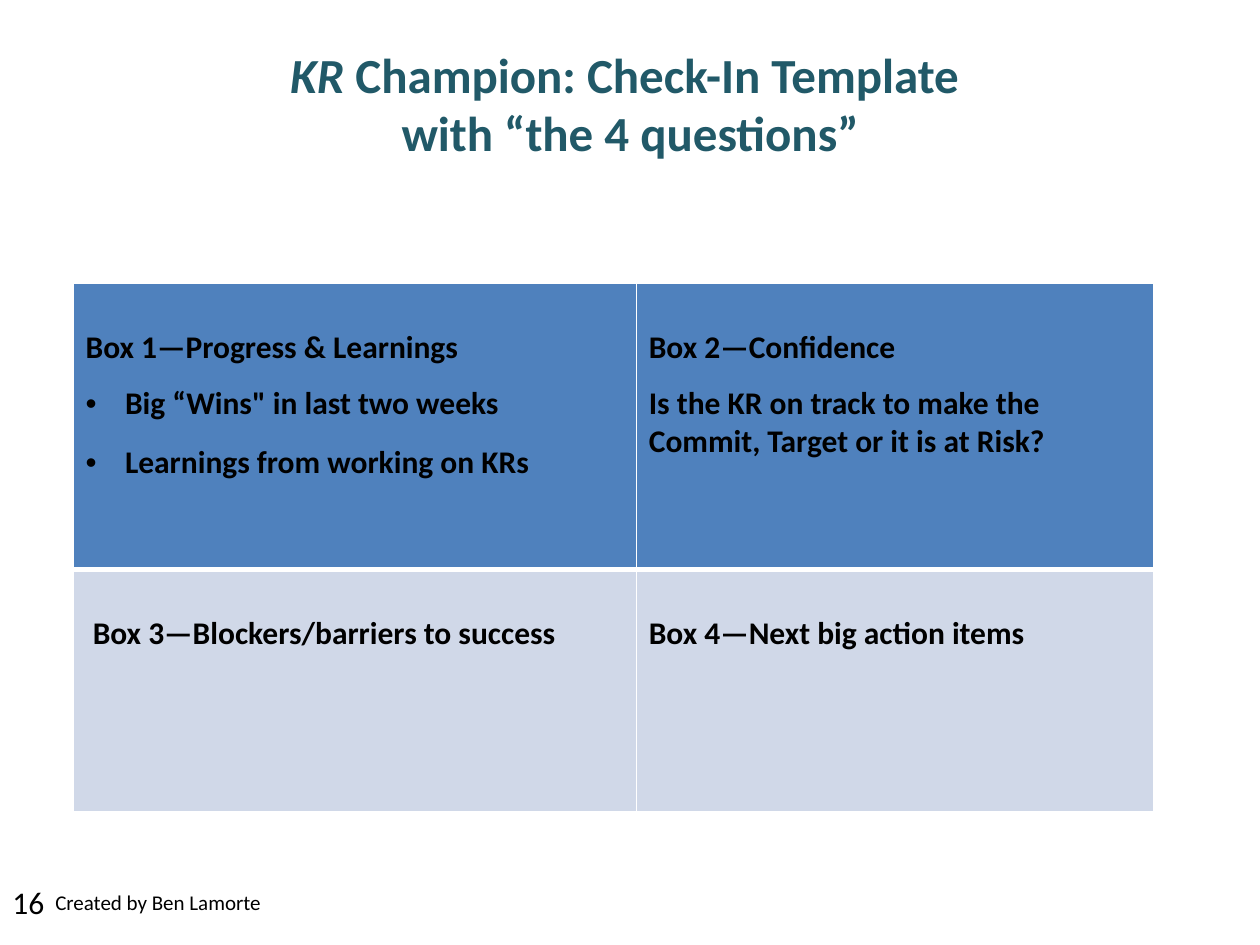
from dataclasses import dataclass
from typing import NamedTuple

from lxml.etree import SubElement
from pptx import Presentation
from pptx.dml.color import RGBColor
from pptx.enum.text import MSO_ANCHOR, MSO_AUTO_SIZE, PP_ALIGN
from pptx.oxml.ns import qn
from pptx.util import Pt


@dataclass(frozen=True)
class Theme:
    font: str = "Calibri"
    teal: str = "215968"
    ink: str = "000000"
    blue: str = "4F81BD"
    pale: str = "D0D8E8"
    rule: str = "FFFFFF"
    title: int = 28
    body: int = 18
    small: int = 12


class Line(NamedTuple):
    text: str
    after: float = 10
    bullet: bool = False


class Box(NamedTuple):
    head: str
    lines: tuple[Line, ...] = ()
    lead: str = ""


class Note(NamedTuple):
    text: str
    left: float
    top: float
    width: float
    size: int


THEME = Theme()
COLS = (321.84, 295.92)
ROWS = (163.44, 138.24)
INDENT = 22.5
GRID = (
    (
        Box("Box 1—Progress & Learnings", (
            Line("Big “Wins\" in last two weeks", 12, True),
            Line("Learnings from working on KRs", 0, True),
        )),
        Box("Box 2—Confidence", (
            Line("Is the KR on track to make the Commit, Target or it is at Risk?"),
        )),
    ),
    (
        Box("Box 3—Blockers/barriers to success", lead=" "),
        Box("Box 4—Next big action items"),
    ),
)
NOTES = (
    Note("16", 0, 501.12, 66.24, THEME.body),
    Note("Created by Ben Lamorte", 24.48, 504.72, 318.24, THEME.small),
)


def add_run(para, text: str, size: int, color: str = THEME.ink,
            bold: bool = False, italic: bool = False) -> None:
    run = para.add_run()
    run.text = text
    font = run.font
    font.name = THEME.font
    font.size = Pt(size)
    font.bold = bold
    font.italic = italic
    font.color.rgb = RGBColor.from_string(color)


def add_bullet(para) -> None:
    props = para._p.get_or_add_pPr()
    props.set("marL", str(Pt(INDENT)))
    props.set("indent", str(-Pt(INDENT)))
    SubElement(props, qn("a:buFont"), typeface="Arial")
    SubElement(props, qn("a:buChar"), char="•")


def add_edges(cell, top: float, base: float) -> None:
    props = cell._tc.get_or_add_tcPr()
    for tag, width in (("lnL", 1), ("lnR", 1), ("lnT", top), ("lnB", base)):
        edge = SubElement(props, qn(f"a:{tag}"), w=str(Pt(width)))
        fill = SubElement(edge, qn("a:solidFill"))
        SubElement(fill, qn("a:srgbClr"), val=THEME.rule)


def fill_cell(cell, box: Box, color: str) -> None:
    cell.fill.solid()
    cell.fill.fore_color.rgb = RGBColor.from_string(color)
    frame = cell.text_frame
    para = frame.paragraphs[0]
    para.line_spacing = 2.0
    para.space_after = Pt(10)
    if box.lead:
        add_run(para, box.lead, THEME.body)
    add_run(para, box.head, THEME.body, bold=True)
    for line in box.lines:
        para = frame.add_paragraph()
        para.space_after = Pt(line.after)
        if line.bullet:
            add_bullet(para)
        add_run(para, line.text, THEME.body, bold=True)


def add_title(slide) -> None:
    title = slide.shapes.title
    title.left, title.top = Pt(36), Pt(21.6)
    title.width, title.height = Pt(648), Pt(90)
    frame = title.text_frame
    frame.auto_size = MSO_AUTO_SIZE.NONE
    frame.vertical_anchor = MSO_ANCHOR.TOP
    para = frame.paragraphs[0]
    para.alignment = PP_ALIGN.CENTER
    add_run(para, "KR ", THEME.title, THEME.teal, True, True)
    add_run(para, "Champion: Check-In Template ", THEME.title, THEME.teal, True)
    para.add_line_break()
    add_run(para, "with “the 4 questions”", THEME.title, THEME.teal, True)


def add_grid(slide) -> None:
    table = slide.shapes.add_table(
        len(ROWS), len(COLS), Pt(41.76), Pt(162), Pt(sum(COLS)), Pt(sum(ROWS))
    ).table
    table.horz_banding = False
    for col, width in zip(table.columns, COLS):
        col.width = Pt(width)
    for row, high in zip(table.rows, ROWS):
        row.height = Pt(high)
    looks = ((THEME.blue, 1, 3), (THEME.pale, 3, 1))
    for row, boxes, (color, top, base) in zip(table.rows, GRID, looks):
        for cell, box in zip(row.cells, boxes):
            add_edges(cell, top, base)
            fill_cell(cell, box, color)


def add_note(slide, note: Note) -> None:
    shape = slide.shapes.add_textbox(
        Pt(note.left), Pt(note.top), Pt(note.width), Pt(28.8)
    )
    frame = shape.text_frame
    frame.word_wrap = True
    add_run(frame.paragraphs[0], note.text, note.size)


def main() -> None:
    deck = Presentation()
    deck.slide_width, deck.slide_height = Pt(720), Pt(540)
    slide = deck.slides.add_slide(deck.slide_layouts[5])
    add_title(slide)
    add_grid(slide)
    for note in NOTES:
        add_note(slide, note)
    deck.save("out.pptx")


if __name__ == "__main__":
    main()
